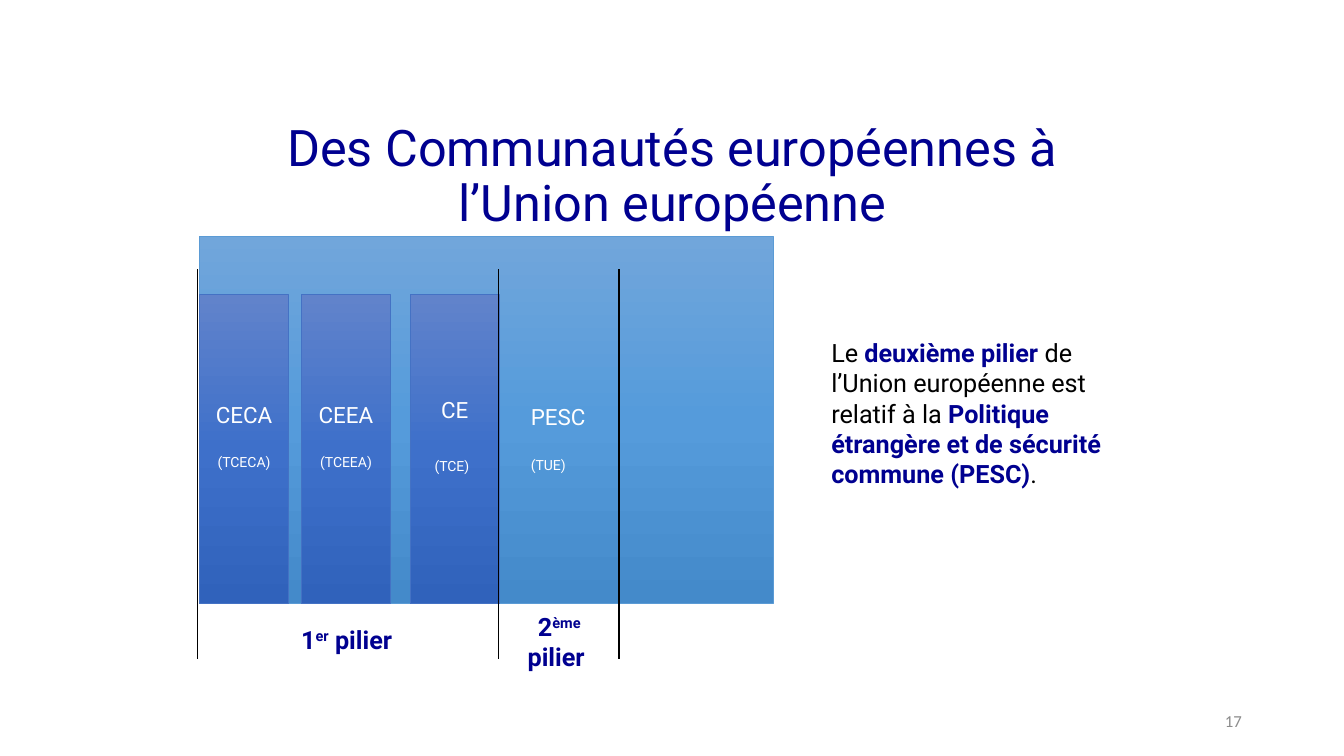
"""Build the slide on the second pillar of the European Union."""
from copy import deepcopy
from pptx import Presentation
from pptx.dml.color import RGBColor
from pptx.enum.shapes import MSO_CONNECTOR as Link, MSO_SHAPE as Form
from pptx.enum.text import MSO_ANCHOR as Anchor, PP_ALIGN as Align
from pptx.oxml.ns import qn
from pptx.util import Cm, Pt

NAVY, BLACK, WHITE, GREY = "000090", "000000", "FFFFFF", "8C8C8C"
SKY = ("71A6DB", "559BDB", "448ACA")
ROYAL = ("6183CB", "3E70CA", "3062BB")


def tint(color, code):
    color.rgb = RGBColor.from_string(code)


def write(frame, rows, align, gap=0, face="Roboto"):
    for n, row in enumerate(rows):
        para = frame.add_paragraph() if n else frame.paragraphs[0]
        para.alignment = align
        if n:
            para.space_before = Pt(gap)
        for text, size, code, style in row:
            run = para.add_run()
            run.text = text
            run.font.name = face
            run.font.size = Pt(size)
            run.font.bold = style != ""
            tint(run.font.color, code)
            if style == "super":
                run.font._element.set("baseline", "30000")


deck = Presentation()
deck.slide_width, deck.slide_height = Cm(33.87), Cm(19.05)
slide = deck.slides.add_slide(deck.slide_layouts[6])
shapes = slide.shapes

panels = [
    (5.03, 5.95, 14.46, 9.25, SKY, "5B9BD5", []),
    (5.03, 7.42, 2.24, 7.79, ROYAL, "4472C4", ["CECA", "(TCECA)"]),
    (7.6, 7.42, 2.24, 7.79, ROYAL, "4472C4", ["CEEA", "(TCEEA)"]),
    (10.34, 7.42, 2.24, 7.79, ROYAL, "4472C4", ["CE", "(TCE)"]),
]
for left, top, width, height, shades, edge, words in panels:
    panel = shapes.add_shape(Form.RECTANGLE, Cm(left), Cm(top), Cm(width), Cm(height))
    panel.shadow.inherit = False
    panel.fill.gradient()
    panel.fill.gradient_angle = 270
    stops = panel._element.spPr.find(".//" + qn("a:gsLst"))
    stops.append(deepcopy(stops[0]))
    for n, stop in enumerate(panel.fill.gradient_stops):
        stop.position = n / 2
        tint(stop.color, shades[n])
    tint(panel.line.color, edge)
    panel.line.width = Pt(0.5)
    if words:
        name, treaty = words
        frame = panel.text_frame
        frame.word_wrap = True
        frame.vertical_anchor = Anchor.MIDDLE
        frame.margin_bottom = Cm(0.79)
        rows = [[(name, 16, WHITE, "")], [(treaty, 10, WHITE, "")]]
        if name == "CE":
            rows[1].append((" ", 16, WHITE, ""))
        write(frame, rows, Align.CENTER, 18.75)

first, second = [
    [[(digit, 18, NAVY, "bold"), (rank, 18, NAVY, "super"), (" pilier ", 18, NAVY, "bold")]]
    for digit, rank in (("1", "er"), ("2", "ème"))
]
title = [[("Des Communautés européennes à l’Union européenne", 36, NAVY, "")]]
note = [[
    ("Le ", 18, BLACK, ""),
    ("deuxième pilier ", 18, NAVY, "bold"),
    ("de l’Union européenne est relatif à la ", 18, BLACK, ""),
    ("Politique étrangère et de sécurité commune (PESC)", 18, NAVY, "bold"),
    (".", 18, BLACK, ""),
]]
policy = [[("PESC", 16, WHITE, "")], [("(TUE)", 10, WHITE, "")]]
page = [[("17", 12, GREY, "")]]

boxes = [
    (6.15, 1.88, 21.59, 4.09, title, Align.CENTER, Anchor.BOTTOM, "Roboto"),
    (5.08, 15.6, 7.47, 1.02, first, Align.CENTER, Anchor.TOP, "Roboto"),
    (20.7, 8.38, 7.87, 4.88, note, Align.LEFT, Anchor.TOP, "Roboto"),
    (12.57, 15.27, 3.05, 1.8, second, Align.CENTER, Anchor.TOP, "Roboto"),
    (13.13, 10.03, 2.08, 2.06, policy, Align.LEFT, Anchor.TOP, "Roboto"),
    (23.93, 17.65, 7.62, 1.02, page, Align.RIGHT, Anchor.MIDDLE, "Calibri"),
]
for left, top, width, height, rows, align, anchor, face in boxes:
    frame = shapes.add_textbox(Cm(left), Cm(top), Cm(width), Cm(height)).text_frame
    frame.word_wrap = rows is not policy
    frame.vertical_anchor = anchor
    write(frame, rows, align, 18.75, face)
    if rows is title:
        frame.paragraphs[0].line_spacing = 0.9

for left in (4.98, 12.57, 15.6):
    rule = shapes.add_connector(Link.STRAIGHT, Cm(left), Cm(6.78), Cm(left), Cm(16.61))
    tint(rule.line.color, BLACK)
    rule.line.width = Pt(1)
    props = rule._element.spPr
    props.append(props.makeelement(qn("a:effectLst"), {}))

deck.save("out.pptx")
